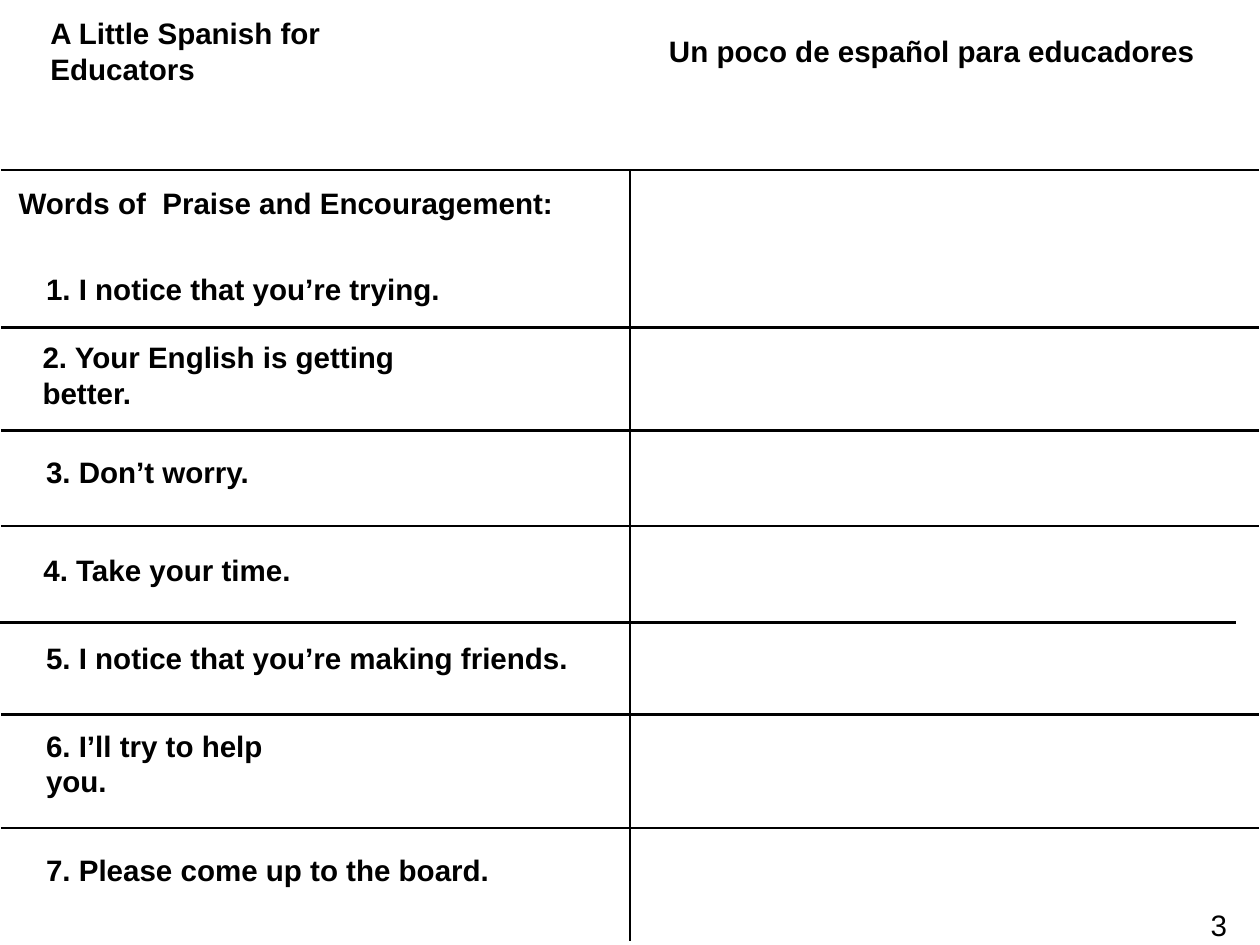
"""Build a Spanish phrase sheet with a ruled two-column grid."""
from pptx import Presentation
from pptx.dml.color import RGBColor
from pptx.enum.shapes import MSO_CONNECTOR
from pptx.enum.text import MSO_ANCHOR, MSO_AUTO_SIZE, PP_ALIGN
from pptx.oxml.ns import qn
from pptx.util import Inches, Pt
from lxml.etree import SubElement

COLORS = {"ink": "000000", "page": "FFFFFF"}
INK = RGBColor.from_string(COLORS["ink"])
PAD = Inches(0.06)
FRAME = {
    "word_wrap": True,
    "auto_size": MSO_AUTO_SIZE.NONE,
    "vertical_anchor": MSO_ANCHOR.MIDDLE,
    "margin_left": PAD,
    "margin_right": PAD,
    "margin_top": PAD,
    "margin_bottom": PAD,
}
FONT = {"name": "Arial", "size": Pt(24)}


def write(box, text, place, bold=True, align=PP_ALIGN.LEFT):
    names = ("left", "top", "width", "height")
    for name, value in zip(names, place):
        setattr(box, name, Inches(value))
    frame = box.text_frame
    frame.text = text
    for name, value in FRAME.items():
        setattr(frame, name, value)
    line = frame.paragraphs[0]
    line.alignment = align
    font = line.runs[0].font
    for name, value in {**FONT, "bold": bold}.items():
        setattr(font, name, value)
    font.color.rgb = INK


def rule(*ends):
    line = shapes.add_connector(MSO_CONNECTOR.STRAIGHT, *map(Inches, ends))
    line.line.width = Pt(2)
    line.line.color.rgb = INK
    SubElement(line._element.spPr, qn("a:effectLst"))


deck = Presentation()
deck.slide_width = Inches(14.22)
deck.slide_height = Inches(10.67)
slide = deck.slides.add_slide(deck.slide_layouts[5])
fill = slide.background.fill
fill.solid()
fill.fore_color.rgb = RGBColor.from_string(COLORS["page"])
shapes = slide.shapes

for y in (1.92, 3.7, 4.86, 5.94, 7.03, 8.07, 9.35):
    x = -0.25 if y == 7.03 else 0.01
    rule(x, y, x + 14.2, y)
rule(7.11, 1.92, 7.11, 10.62)

write(shapes.title, "A Little Spanish for Educators", (0.51, 0.32, 4.8, 0.5))

labels = [
    ("Un poco de español para educadores", 7.49, 0.32, 6.15),
    ("Words of  Praise and Encouragement:", 0.15, 2.04, 6.3),
    ("1. I notice that you’re trying.", 0.46, 3.01, 4.7),
    ("2. Your English is getting better.", 0.42, 3.98, 5.05),
    ("3. Don’t worry.", 0.46, 5.08, 2.5),
    ("4. Take your time.", 0.43, 6.18, 3),
    ("5. I notice that you’re making friends.", 0.46, 7.18, 6.1),
    ("6. I’ll try to help you.", 0.46, 8.37, 3.2),
    ("7. Please come up to the board.", 0.46, 9.57, 5.25),
]
for text, left, top, width in labels:
    write(shapes.add_textbox(0, 0, 0, 0), text, (left, top, width, 0.5))

page = shapes.add_textbox(0, 0, 0, 0)
write(page, "3", (13.6, 10.18, 0.31, 0.51), False, PP_ALIGN.CENTER)

deck.save("out.pptx")
